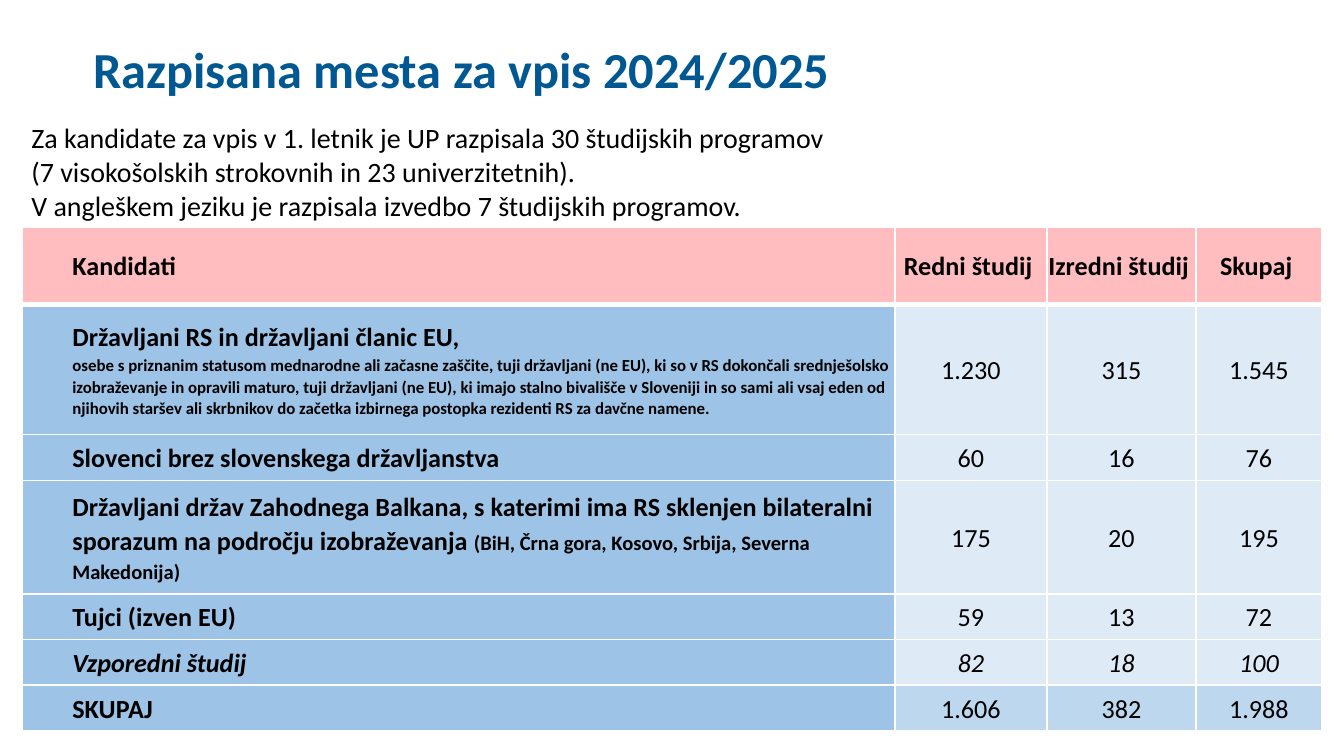
import pptx
import pptx.dml.color
import pptx.enum.text
import pptx.oxml
import pptx.oxml.ns
import pptx.util

Pt = pptx.util.Pt
ALIGN = pptx.enum.text.PP_ALIGN
ANCHOR = pptx.enum.text.MSO_ANCHOR

HEADER_FILL = "FFBDBF"
LABEL_FILL = "9DC3E6"
VALUE_FILL = "DEEBF7"
TOTAL_FILL = "BDD7EE"


def color(hex_text):
    return pptx.dml.color.RGBColor.from_string(hex_text)


def add_run(paragraph, text, size, hex_text="000000", bold=False, italic=False):
    run = paragraph.add_run()
    run.text = text
    run.font.name = "Calibri"
    run.font.size = Pt(size)
    run.font.bold = bold
    run.font.italic = italic
    run.font.color.rgb = color(hex_text)


presentation = pptx.Presentation()
presentation.slide_width = Pt(720)
presentation.slide_height = Pt(405)
slide = presentation.slides.add_slide(presentation.slide_layouts[6])

# Each label is a list of paragraphs, each paragraph a list of (text, size) runs.
rows = [
    (41.5, [[("Kandidati", 14)]], ["Redni študij", "Izredni študij", "Skupaj"]),
    (69.7, [
        [("Državljani RS in državljani članic EU,", 14)],
        [("osebe s priznanim statusom mednarodne ali začasne zaščite, tuji državljani "
          "(ne EU), ki so v RS dokončali srednješolsko izobraževanje in opravili maturo, "
          "tuji državljani (ne EU), ki imajo stalno bivališče v Sloveniji in so sami ali "
          "vsaj eden od njihovih staršev ali skrbnikov do začetka izbirnega postopka "
          "rezidenti RS za davčne namene.", 9)],
    ], ["1.230", "315", "1.545"]),
    (24.5, [[("Slovenci brez slovenskega državljanstva", 14)]], ["60", "16", "76"]),
    (60.8, [[
        ("Državljani držav Zahodnega Balkana, s katerimi ima RS sklenjen bilateralni "
         "sporazum na področju izobraževanja ", 14),
        ("(BiH, Črna gora, Kosovo, Srbija, Severna Makedonija)", 11),
    ]], ["175", "20", "195"]),
    (24.5, [[("Tujci (izven EU)", 14)]], ["59", "13", "72"]),
    (24.5, [[("Vzporedni študij", 14)]], ["82", "18", "100"]),
    (24.5, [[("SKUPAJ", 14)]], ["1.606", "382", "1.988"]),
]
column_widths = [467.7, 81.4, 79.9, 67.5]
last_row = len(rows) - 1
italic_row = last_row - 1

table = slide.shapes.add_table(
    len(rows), len(column_widths), Pt(11.75), Pt(121.7),
    Pt(sum(column_widths)), Pt(sum(row[0] for row in rows))).table
for column, width in zip(table.columns, column_widths):
    column.width = Pt(width)

for row_index, (height, label, values) in enumerate(rows):
    table.rows[row_index].height = Pt(height)
    is_header = row_index == 0
    contents = [label] + [[[(value, 14)]] for value in values]
    for column_index, paragraphs in enumerate(contents):
        is_label = column_index == 0
        cell = table.cell(row_index, column_index)
        cell.vertical_anchor = ANCHOR.MIDDLE
        cell.margin_left = cell.margin_top = cell.margin_bottom = 0
        cell.margin_right = Pt(3) if is_header else 0

        border_widths = {"lnL": 1, "lnR": 1,
                         "lnT": 3 if row_index == 1 else 1,
                         "lnB": 3 if is_header else 1}
        for tag, width in border_widths.items():
            cell._tc.get_or_add_tcPr().append(pptx.oxml.parse_xml(
                f'<a:{tag} {pptx.oxml.ns.nsdecls("a")} w="{Pt(width)}">'
                f'<a:solidFill><a:srgbClr val="FFFFFF"/></a:solidFill></a:{tag}>'))

        if is_header:
            fill = HEADER_FILL
        elif is_label:
            fill = LABEL_FILL
        else:
            fill = TOTAL_FILL if row_index == last_row else VALUE_FILL
        cell.fill.solid()
        cell.fill.fore_color.rgb = color(fill)

        for paragraph_index, runs in enumerate(paragraphs):
            frame = cell.text_frame
            paragraph = frame.add_paragraph() if paragraph_index else frame.paragraphs[0]
            paragraph.line_spacing = 1.07
            if is_label:
                paragraph.level = 1
                paragraph._p.get_or_add_pPr().set("marL", str(Pt(27)))
            else:
                paragraph.alignment = ALIGN.CENTER
            for text, size in runs:
                add_run(paragraph, text, size, bold=is_header or is_label,
                        italic=row_index == italic_row)

introduction = [
    "Za kandidate za vpis v 1. letnik je UP razpisala 30 študijskih programov",
    "(7 visokošolskih strokovnih in 23 univerzitetnih).",
    "V angleškem jeziku je razpisala izvedbo 7 študijskih programov.",
]
text_boxes = [
    ((11.5, 52.6, 653.8, 69.1), 2.9, introduction, 15, "000000", False),
    ((44.6, -5.8, 613.4, 58.8), 0, ["Razpisana mesta za vpis 2024/2025"], 27, "005892", True),
]
for position, bottom_margin, lines, size, hex_text, bold in text_boxes:
    frame = slide.shapes.add_textbox(*map(Pt, position)).text_frame
    frame.word_wrap = True
    frame.vertical_anchor = ANCHOR.BOTTOM
    frame.margin_left = frame.margin_right = Pt(5.3)
    frame.margin_top = Pt(2.9)
    frame.margin_bottom = Pt(bottom_margin)
    for line_index, line in enumerate(lines):
        paragraph = frame.add_paragraph() if line_index else frame.paragraphs[0]
        paragraph.alignment = ALIGN.JUSTIFY
        add_run(paragraph, line, size, hex_text, bold)

presentation.save("out.pptx")
